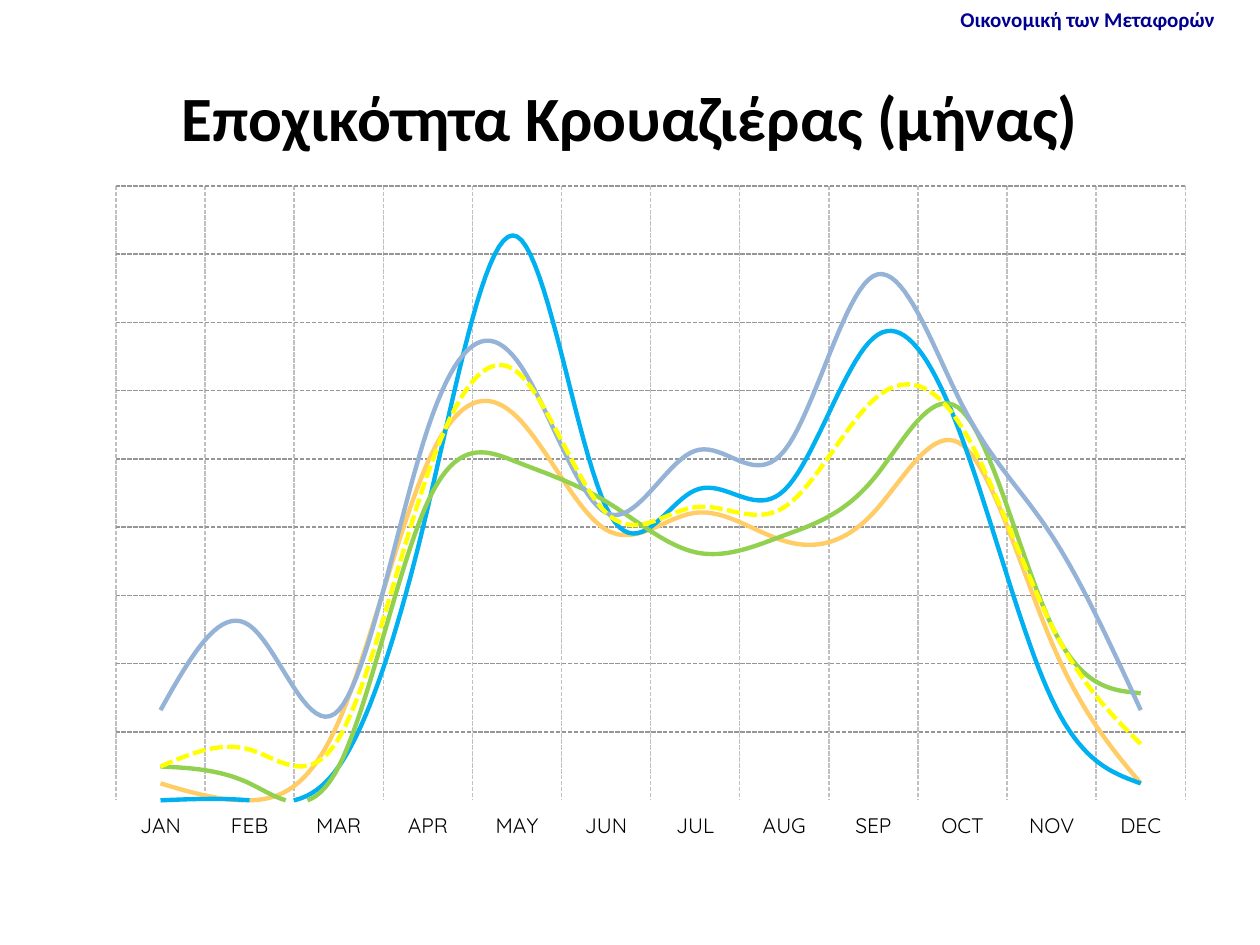
from lxml import etree
from pptx import Presentation
from pptx.chart.data import CategoryChartData
from pptx.dml.color import RGBColor
from pptx.enum.chart import XL_CHART_TYPE as ChartType, XL_TICK_MARK as TickMark
from pptx.enum.dml import MSO_LINE as Dash
from pptx.enum.text import MSO_ANCHOR as Anchor, PP_ALIGN as Align
from pptx.oxml.ns import qn
from pptx.util import Inches, Pt

COLORS = {
    "header": "000090", "text": "000000", "axis": "FFFFFF",
    "month grid": "C0C0C0", "value grid": "969696",
    "orange": "FFCC66", "blue": "00B0F0", "green": "92D050",
    "steel": "95B3D7", "yellow": "FFFF00",
}
HEADER = "Οικονομική των Μεταφορών"
TITLE = "Εποχικότητα Κρουαζιέρας (μήνας)"
MONTHS = ["JAN", "FEB", "MAR", "APR", "MAY", "JUN",
          "JUL", "AUG", "SEP", "OCT", "NOV", "DEC"]
SERIES = [
    ("Series 1", "orange", None, [3, 0, 14, 60, 68, 48, 51, 46, 51, 63, 28, 3]),
    ("Series 2", "blue", None, [0, 0, 6, 52, 100, 52, 55, 55, 82, 64, 18, 3]),
    ("Series 3", "green", None, [6, 3, 6, 53, 60, 53, 44, 47, 57, 69, 31, 19]),
    ("Series 4", "steel", None, [16, 31, 16, 66, 78, 51, 62, 62, 93, 70, 47, 16]),
    ("Series 5", "yellow", Dash.SQUARE_DOT, [6, 9, 11, 58, 76, 51, 52, 52, 71, 66, 31, 10]),
]
PLOT_AREA = {"x": 0.07, "y": 0.038, "w": 0.886, "h": 0.824}
AXIS_MAXIMUM, GRID_STEP = 109, 12.11


def color(name):
    return RGBColor.from_string(COLORS[name])


def style_line(line, name, width, dash=None):
    line.color.rgb = color(name)
    line.width = Pt(width)
    if dash is not None:
        line.dash_style = dash


def add_text(slide, text, box, size, name, align, wrap):
    shape = slide.shapes.add_textbox(*map(Inches, box))
    frame = shape.text_frame
    frame.word_wrap = wrap
    frame.vertical_anchor = Anchor.MIDDLE
    paragraph = frame.paragraphs[0]
    paragraph.text = text
    paragraph.alignment = align
    font = paragraph.font
    font.name, font.size, font.bold = "Calibri", Pt(size), True
    font.color.rgb = color(name)


def set_plot_layout(chart):
    plot_area = chart._chartSpace.chart.plotArea
    for old in plot_area.findall(qn("c:layout")):
        plot_area.remove(old)
    layout = etree.Element(qn("c:layout"))
    manual = etree.SubElement(layout, qn("c:manualLayout"))
    settings = [("layoutTarget", "inner"), ("xMode", "edge"), ("yMode", "edge")]
    for tag, value in settings + list(PLOT_AREA.items()):
        etree.SubElement(manual, qn(f"c:{tag}")).set("val", str(value))
    plot_area.insert(0, layout)


def add_season_chart(slide):
    data = CategoryChartData(number_format="#,##0")
    data.categories = MONTHS
    for name, _, _, values in SERIES:
        data.add_series(name, values)
    box = map(Inches, (0.25, 1.25, 9.58, 5.92))
    chart = slide.shapes.add_chart(ChartType.LINE, *box, data).chart
    chart.has_legend = False
    chart.has_title = False
    chart.font.name, chart.font.size = "Quicksand", Pt(12)
    chart.font.color.rgb = color("text")
    chart.plots[0].vary_by_categories = False

    months, values = chart.category_axis, chart.value_axis
    for axis, grid in ((months, "month grid"), (values, "value grid")):
        axis.has_major_gridlines = True
        style_line(axis.major_gridlines.format.line, grid, 0.84, Dash.SQUARE_DOT)
    months.major_tick_mark = TickMark.OUTSIDE
    style_line(months.format.line, "axis", 0.84)
    values.minimum_scale, values.maximum_scale = 0, AXIS_MAXIMUM
    values.major_unit = GRID_STEP
    values.visible = False

    for series, (_, name, dash, _) in zip(chart.plots[0].series, SERIES):
        series.smooth = True
        style_line(series.format.line, name, 2.5, dash)
    set_plot_layout(chart)


def main():
    presentation = Presentation()
    presentation.slide_width, presentation.slide_height = Inches(10), Inches(7.5)
    slide = presentation.slides.add_slide(presentation.slide_layouts[6])
    add_text(slide, HEADER, (7.49, 0, 2.25, 0.3), 12, "header", Align.RIGHT, False)
    add_text(slide, TITLE, (0.5, 0.3, 9, 1.25), 36, "text", Align.CENTER, True)
    add_season_chart(slide)
    presentation.save("out.pptx")


if __name__ == "__main__":
    main()
